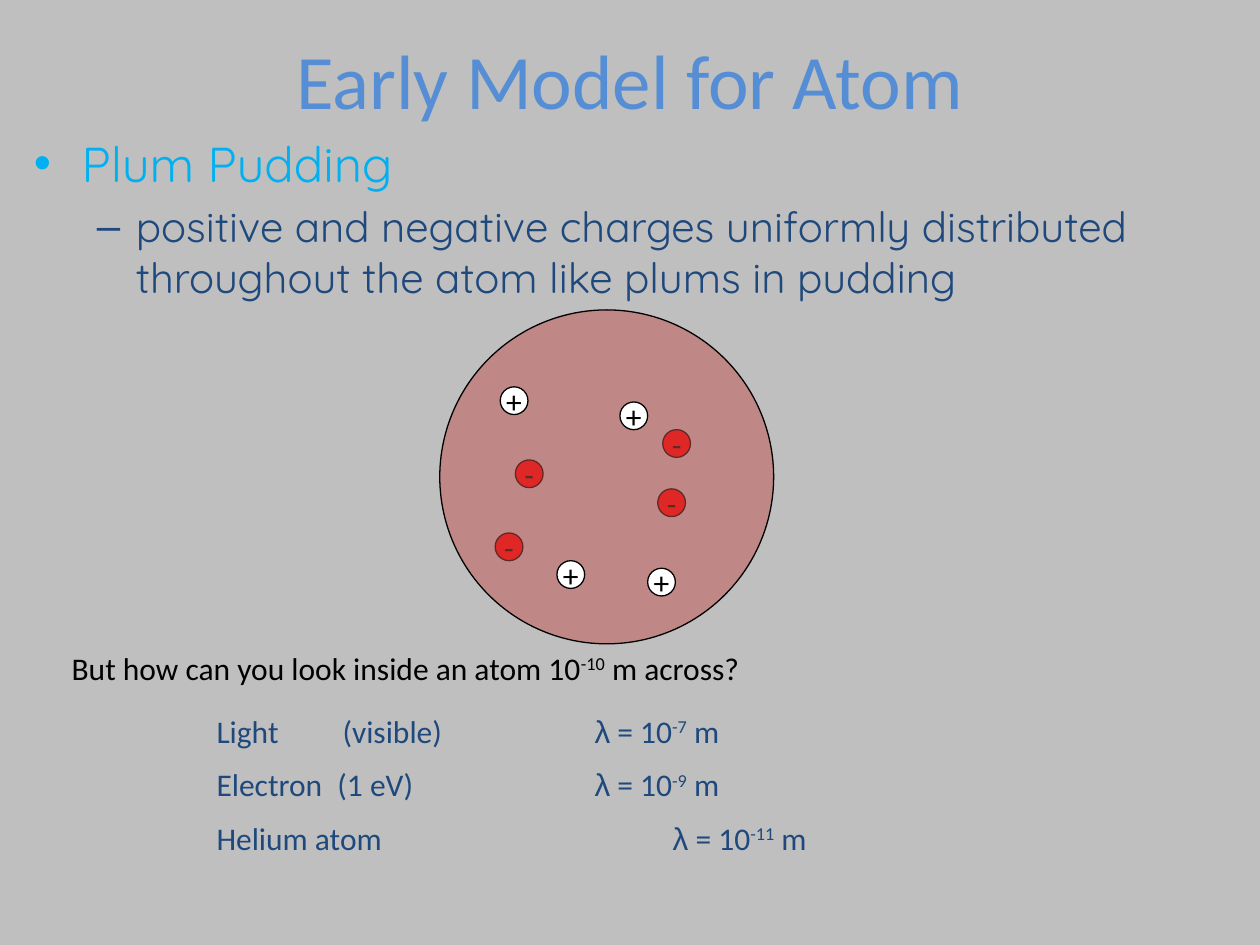
from dataclasses import dataclass

import pptx
import pptx.dml.color
import pptx.enum.shapes
import pptx.enum.text
import pptx.oxml
import pptx.oxml.ns
import pptx.util
from pptx.dml.color import RGBColor
from pptx.util import Inches, Pt

GREY = RGBColor(0xBF, 0xBF, 0xBF)
TITLE_BLUE = RGBColor(0x55, 0x8E, 0xD5)
SKY_BLUE = RGBColor(0x00, 0xB0, 0xF0)
NAVY = RGBColor(0x1F, 0x49, 0x7D)
BLACK = RGBColor(0, 0, 0)
WHITE = RGBColor(0xFF, 0xFF, 0xFF)
RED = RGBColor(0xFF, 0, 0)
PUDDING = RGBColor(0xC0, 0x50, 0x4D)
CHARGE_SIZE = 0.22


@dataclass(frozen=True)
class Charge:
    left: float
    top: float


@dataclass(frozen=True)
class Bullet:
    text: str
    mark: str
    margin: float
    hanging: float
    size: int
    color: RGBColor
    level: int
    space: float


@dataclass(frozen=True)
class Wavelength:
    label: str
    exponent: str
    tabs: tuple[float, ...]
    space: int


ELECTRONS = (Charge(3.93, 4.23), Charge(5.22, 3.88), Charge(5.26, 3.41), Charge(4.09, 3.65))
PROTONS = (Charge(4.42, 4.45), Charge(3.97, 3.07), Charge(5.14, 4.51), Charge(4.92, 3.19))
BULLETS = (
    Bullet("Plum Pudding", "•", 0.38, 0.38, 28, SKY_BLUE, 0, 0),
    Bullet(
        "positive and negative charges uniformly distributed "
        "throughout the atom like plums in pudding",
        "–", 0.81, 0.31, 24, NAVY, 1, 4.8,
    ),
)
WAVELENGTHS = (
    Wavelength("Light\t(visible)\t", "-7", (1, 3), 0),
    Wavelength("Electron\t(1 eV)\t", "-9", (0.96, 3), 9),
    Wavelength("Helium atom\t", "-11", (3.62,), 9),
)


def add_child(parent, tag: str, **attributes: str):
    child = pptx.oxml.parse_xml(f"<a:{tag} {pptx.oxml.ns.nsdecls('a')}/>")
    for name, value in attributes.items():
        child.set(name, value)
    parent.append(child)
    return child


def format_font(font, size: int, color: RGBColor, name: str = "Calibri") -> None:
    font.size = Pt(size)
    font.name = name
    font.color.rgb = color


def add_span(para, text: str, color: RGBColor, name: str = "Calibri", raised: bool = False) -> None:
    span = para.add_run()
    span.text = text
    format_font(span.font, 18, color, name)
    if raised:
        span._r.get_or_add_rPr().set("baseline", "30000")


def add_text_box(page, left: float, top: float, width: float, height: float):
    box = page.shapes.add_textbox(Inches(left), Inches(top), Inches(width), Inches(height))
    box.text_frame.word_wrap = True
    return box.text_frame


def next_paragraph(frame, index: int):
    return frame.add_paragraph() if index else frame.paragraphs[0]


def add_circle(page, left: float, top: float, size: float, color: RGBColor):
    circle = page.shapes.add_shape(
        pptx.enum.shapes.MSO_SHAPE.OVAL, Inches(left), Inches(top), Inches(size), Inches(size)
    )
    circle.shadow.inherit = False
    circle.fill.solid()
    circle.fill.fore_color.rgb = color
    circle.line.color.rgb = BLACK
    circle.line.width = Pt(0.75)
    return circle


def add_charges(page, charges: tuple[Charge, ...], sign: str, color: RGBColor) -> None:
    for charge in charges:
        frame = add_circle(page, charge.left, charge.top, CHARGE_SIZE, color).text_frame
        frame.text = sign
        frame.word_wrap = False
        frame.vertical_anchor = pptx.enum.text.MSO_ANCHOR.MIDDLE
        para = frame.paragraphs[0]
        para.alignment = pptx.enum.text.PP_ALIGN.CENTER
        format_font(para.runs[0].font, 18, BLACK)


def add_atom(page) -> None:
    add_charges(page, ELECTRONS, "-", RED)
    pudding = add_circle(page, 3.49, 2.46, 2.65, PUDDING)
    color = pudding._element.spPr.find(".//" + pptx.oxml.ns.qn("a:srgbClr"))
    add_child(color, "alpha", val="50000")
    add_charges(page, PROTONS, "+", WHITE)


def add_title(page) -> None:
    title = page.shapes.title
    title.left, title.top = Inches(0.75), Inches(0)
    title.width, title.height = Inches(8.5), Inches(1.25)
    frame = title.text_frame
    frame.text = "Early Model for Atom"
    frame.vertical_anchor = pptx.enum.text.MSO_ANCHOR.MIDDLE
    frame.paragraphs[0].alignment = pptx.enum.text.PP_ALIGN.CENTER
    format_font(frame.paragraphs[0].runs[0].font, 44, TITLE_BLUE)


def add_question(page) -> None:
    para = add_text_box(page, 0.47, 5.1, 8.95, 0.5).paragraphs[0]
    add_span(para, "But how can you look inside an atom 10", BLACK)
    add_span(para, "-10", BLACK, raised=True)
    add_span(para, " m across?", BLACK)


def add_wavelengths(page) -> None:
    frame = add_text_box(page, 1.62, 5.6, 6.02, 1.7)
    for index, row in enumerate(WAVELENGTHS):
        para = next_paragraph(frame, index)
        para.space_before = Pt(row.space)
        stops = add_child(para._p.get_or_add_pPr(), "tabLst")
        for position in row.tabs:
            add_child(stops, "tab", pos=str(int(Inches(position))), algn="l")
        add_span(para, row.label, NAVY)
        add_span(para, "λ", NAVY, "Arial")
        add_span(para, " = 10", NAVY)
        add_span(para, row.exponent, NAVY, raised=True)
        add_span(para, " m", NAVY)


def add_bullets(page) -> None:
    frame = add_text_box(page, 0.17, 1.01, 9.66, 2.07)
    for index, bullet in enumerate(BULLETS):
        para = next_paragraph(frame, index)
        para.text = bullet.text
        para.level = bullet.level
        para.space_before = Pt(bullet.space)
        format_font(para.runs[0].font, bullet.size, bullet.color, "Quicksand")
        properties = para._p.get_or_add_pPr()
        properties.set("marL", str(int(Inches(bullet.margin))))
        properties.set("indent", str(int(Inches(-bullet.hanging))))
        add_child(properties, "buFont", typeface="Arial")
        add_child(properties, "buChar", char=bullet.mark)


def main() -> None:
    deck = pptx.Presentation()
    deck.slide_width, deck.slide_height = Inches(10), Inches(7.5)
    page = deck.slides.add_slide(deck.slide_layouts.get_by_name("Title Only"))
    page.background.fill.solid()
    page.background.fill.fore_color.rgb = GREY
    add_title(page)
    add_question(page)
    add_wavelengths(page)
    add_atom(page)
    add_bullets(page)
    deck.save("out.pptx")


if __name__ == "__main__":
    main()
